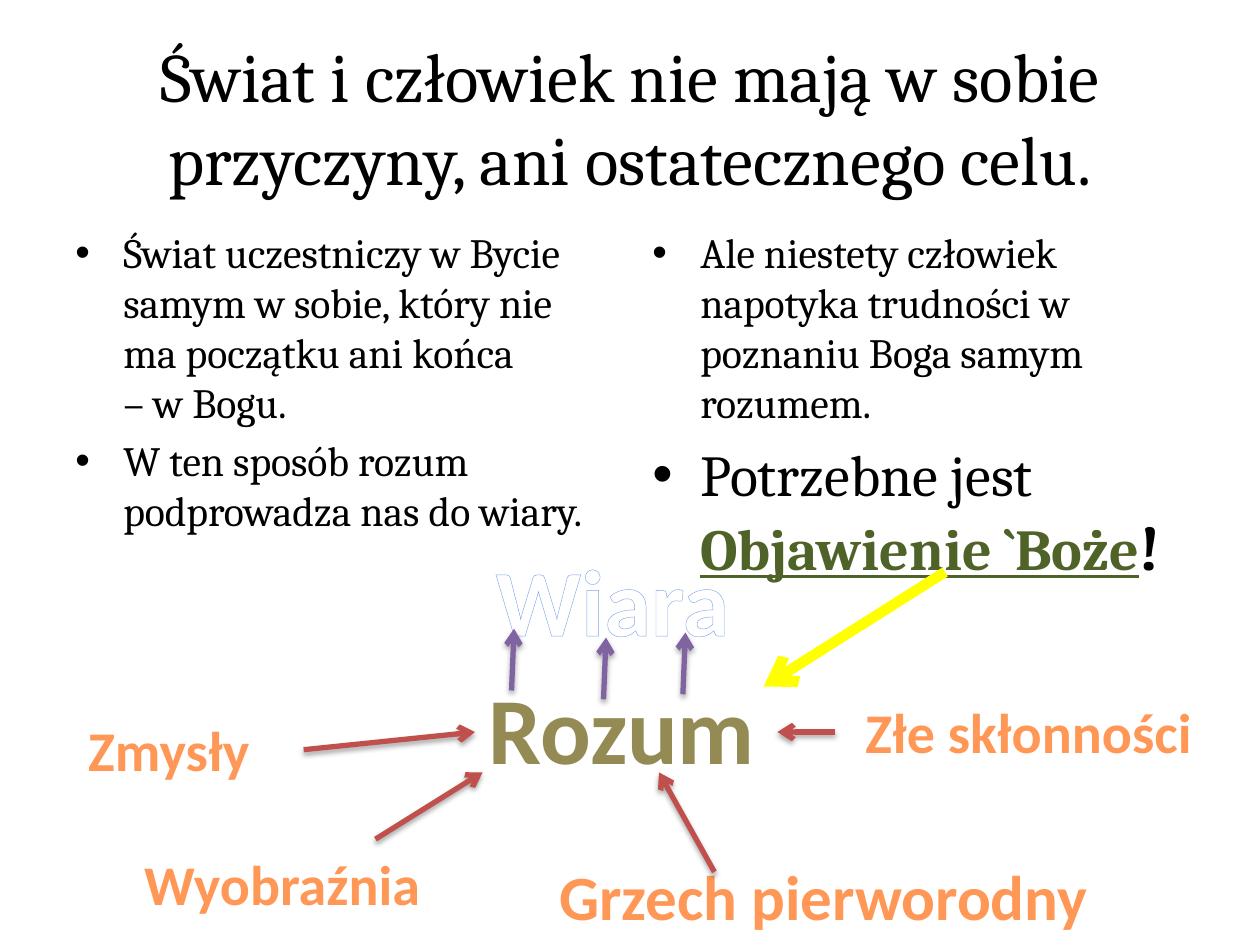
from lxml.etree import SubElement
from pptx import Presentation
from pptx.dml.color import RGBColor
from pptx.enum.shapes import MSO_CONNECTOR
from pptx.enum.text import MSO_ANCHOR, PP_ALIGN
from pptx.oxml.ns import qn
from pptx.util import Inches, Pt

BLACK, WHITE, GREEN, OLIVE = "000000", "FFFFFF", "4F6228", "948A54"
RED, PURPLE, YELLOW = "C0504D", "8064A2", "FFFF00"
ORANGE_STOPS = ((0, "9D4700"), (78, "FF9856"), (100, "FFF5F1"))
LEFT_SIDE, RIGHT_SIDE = 1, 3


def color(hex_value):
    return RGBColor.from_string(hex_value)


def child(parent, tag, **attributes):
    return SubElement(parent, qn(tag), {k: str(v) for k, v in attributes.items()})


def add_text(paragraph, text, size=23.8, font="Cambria", fill=BLACK,
             bold=False, underline=False, outline=None, gradient=None):
    """Add formatted text; a newline becomes a line break."""
    for number, line in enumerate(text.split("\n")):
        if number:
            paragraph.add_line_break()
        run = paragraph.add_run()
        run.text = line
        style = run.font
        style.size, style.name = Pt(size), font
        style.bold, style.underline = bold, underline
        properties = run._r.get_or_add_rPr()
        if gradient:
            style.fill.background()
            solid = properties.find(qn("a:noFill"))
            blend = child(properties, "a:gradFill", rotWithShape=1)
            properties.replace(solid, blend)
            stops = child(blend, "a:gsLst")
            for position, shade in gradient:
                stop = child(stops, "a:gs", pos=position * 1000)
                child(stop, "a:srgbClr", val=shade)
            child(blend, "a:lin", ang=90 * 60000, scaled=0)
        else:
            style.color.rgb = color(fill)
        if outline:
            shade, width = outline
            line_format = child(properties, "a:ln", w=Pt(width))
            child(child(line_format, "a:solidFill"), "a:srgbClr", val=shade)
            properties.insert(0, line_format)


class SlideBuilder:
    def __init__(self, slide):
        self.slide = slide

    def box(self, left, top, width, height, wrap=True, anchor=MSO_ANCHOR.TOP):
        shape = self.slide.shapes.add_textbox(
            Inches(left), Inches(top), Inches(width), Inches(height))
        shape.text_frame.word_wrap = wrap
        shape.text_frame.vertical_anchor = anchor
        return shape

    def label(self, text, *place, wrap=True, anchor=MSO_ANCHOR.TOP, **style):
        shape = self.box(*place, wrap=wrap, anchor=anchor)
        paragraph = shape.text_frame.paragraphs[0]
        paragraph.alignment = PP_ALIGN.CENTER
        add_text(paragraph, text, **style)
        return shape

    def bullets(self, items, *place):
        """Each item is a list of (text, style) parts."""
        frame = self.box(*place).text_frame
        for number, parts in enumerate(items):
            paragraph = frame.add_paragraph() if number else frame.paragraphs[0]
            properties = paragraph._p.get_or_add_pPr()
            properties.set("marL", str(Inches(0.38)))
            properties.set("indent", str(Inches(-0.38)))
            child(properties, "a:buFont", typeface="Arial")
            child(properties, "a:buChar", char="•")
            if number:
                paragraph.space_before = Pt(0.2 * parts[0][1].get("size", 23.8))
            for text, style in parts:
                add_text(paragraph, text, **style)

    def arrow(self, start, end, shade, width=3, shadow=True):
        line = self.slide.shapes.add_connector(
            MSO_CONNECTOR.STRAIGHT, *map(Inches, start + end))
        line.line.color.rgb = color(shade)
        line.line.width = Pt(width)
        child(line.line._get_or_add_ln(), "a:tailEnd", type="arrow")
        effects = child(line._element.spPr, "a:effectLst")
        if shadow:
            outer = child(effects, "a:outerShdw", blurRad=Pt(3.1), dist=Pt(1.8),
                          dir=90 * 60000, rotWithShape=0)
            black = child(outer, "a:srgbClr", val=BLACK)
            child(black, "a:alpha", val=35000)
        return line


def main():
    deck = Presentation()
    deck.slide_width, deck.slide_height = Inches(10), Inches(7.5)
    page = SlideBuilder(deck.slides.add_slide(deck.slide_layouts[6]))

    # Title
    page.label("Świat i człowiek nie mają w sobie przyczyny, ani ostatecznego celu.",
               0.5, 0.3, 9, 1.25, anchor=MSO_ANCHOR.MIDDLE, size=39.6)

    # Two columns of arguments
    page.bullets([
        [("Świat uczestniczy w Bycie samym w sobie, który nie ma początku "
          "ani końca\n– w Bogu.", {})],
        [("W ten sposób rozum podprowadza nas do wiary.", {})],
    ], 0.5, 1.75, 4.42, 4.95)
    page.bullets([
        [("Ale niestety człowiek napotyka trudności w poznaniu Boga samym rozumem.", {})],
        [("Potrzebne jest ", dict(size=33.1)),
         ("Objawienie `Boże", dict(size=33.1, fill=GREEN, bold=True, underline=True)),
         ("!", dict(size=35.7, bold=True))],
    ], 5.08, 1.75, 4.42, 3.02)

    # Influences on reason
    influence = dict(font="Calibri", bold=True, gradient=ORANGE_STOPS)
    senses = page.label("Zmysły", 0.27, 5.63, 2.14, 0.64, size=32, **influence)
    page.label("Grzech pierworodny", 3.82, 6.76, 5.43, 0.71, size=36, **influence)
    page.label("Wyobraźnia", 0.98, 6.69, 2.52, 0.64, size=32, **influence)
    page.label("Złe skłonności", 6.73, 5.49, 2.87, 0.64, size=32, **influence)

    # Faith and reason
    core = dict(wrap=False, size=54, font="Calibri", bold=True)
    page.label("Wiara", 3.82, 4.25, 2.08, 1.01, fill=WHITE,
               outline=("7EA6EA", 2.48), **core)
    reason = page.label("Rozum", 3.77, 5.27, 2.33, 1.08, fill=OLIVE,
                        outline=("054697", 1), **core)

    # Arrows from the influences to reason
    from_senses = page.arrow((2.41, 5.95), (3.77, 5.81), RED)
    from_senses.begin_connect(senses, RIGHT_SIDE)
    from_senses.end_connect(reason, LEFT_SIDE)
    for start, end in (((2.98, 6.66), (3.83, 6.13)),
                       ((6.63, 5.81), (6.17, 5.81)),
                       ((5.67, 6.92), (5.23, 6.13))):
        page.arrow(start, end, RED)

    # Arrows from reason up to faith
    for x, y in ((4.79, 5.55), (4.06, 5.48), (5.42, 5.51)):
        page.arrow((x, y), (x + 0.02, y - 0.49), PURPLE)

    # Arrow from revelation to reason
    page.arrow((7.5, 4.54), (6.06, 5.45), YELLOW, width=6, shadow=False)

    deck.save("out.pptx")


if __name__ == "__main__":
    main()
